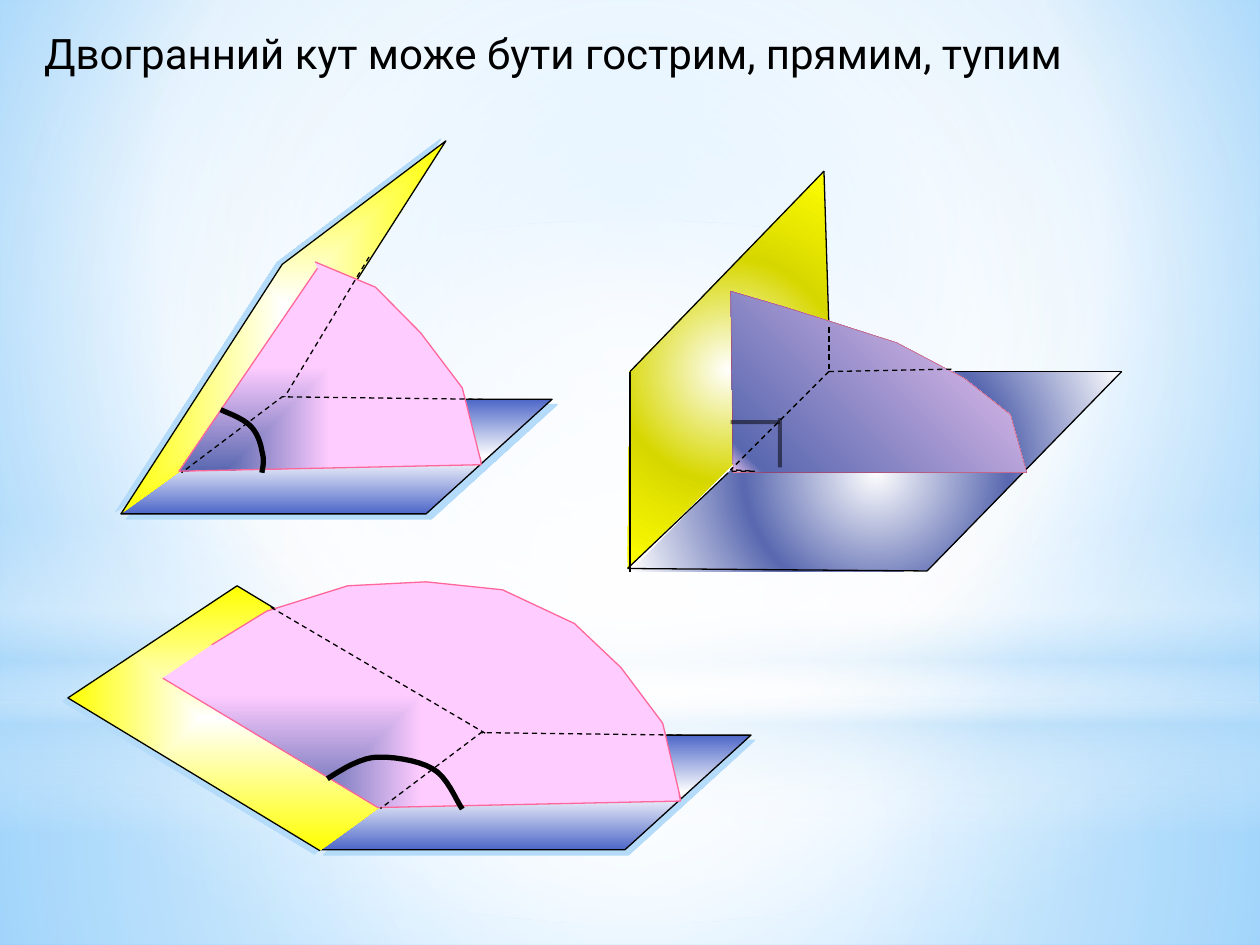
"""Build a slide showing acute, right and obtuse dihedral angles."""
import pptx
import pptx.dml.color
import pptx.enum.dml
import pptx.enum.shapes
import pptx.oxml
import pptx.oxml.ns
import pptx.util
from lxml import etree

Cm = pptx.util.Cm
Pt = pptx.util.Pt
RGBColor = pptx.dml.color.RGBColor
qn = pptx.oxml.ns.qn
SHAPE = pptx.enum.shapes.MSO_SHAPE

BLACK = RGBColor(0x00, 0x00, 0x00)
WHITE = RGBColor(0xFF, 0xFF, 0xFF)
SKY = RGBColor(0x9E, 0xD5, 0xFF)
DEEP_SKY = RGBColor(0x5B, 0xB9, 0xFF)
PALE_SKY = RGBColor(0xB4, 0xDC, 0xFA)
BLUE = RGBColor(0x4E, 0x67, 0xC8)
YELLOW = RGBColor(0xFF, 0xFF, 0x00)
OLIVE = RGBColor(0xD7, 0xD7, 0x00)
INDIGO = RGBColor(0x59, 0x68, 0xB0)
PINK = RGBColor(0xFF, 0xCC, 0xFF)
MAUVE = RGBColor(0xF6, 0xCA, 0xF4)
ROSE = RGBColor(0xFF, 0x66, 0x99)
RED = RGBColor(0xFF, 0x00, 0x00)

CENTRE = (50, 50, 50, 50)
BOTTOM_LEFT = (0, 100, 100, 0)


def apply_gradient(fill, owner, stops, path="rect", focus=CENTRE):
    fill.gradient()
    gradient = next(owner.iter(qn("a:gradFill")))
    for child in list(gradient):
        gradient.remove(child)
    stop_list = etree.SubElement(gradient, qn("a:gsLst"))
    for position, colour, *opacity in stops:
        stop = etree.SubElement(stop_list, qn("a:gs"), pos=str(position * 1000))
        rgb = etree.SubElement(stop, qn("a:srgbClr"), val=str(colour))
        for percent in opacity:
            etree.SubElement(rgb, qn("a:alpha"), val=str(percent * 1000))
    if path == "linear":
        etree.SubElement(gradient, qn("a:lin"), ang="5400000", scaled="0")
    else:
        route = etree.SubElement(gradient, qn("a:path"), path=path)
        sides = {side: str(value * 1000) for side, value in zip("ltrb", focus)}
        etree.SubElement(route, qn("a:fillToRect"), **sides)


def draw(points, colour=BLACK, width=0.75, dashed=False, opacity=100, closed=False,
         stops=None, path="rect", focus=CENTRE, shadow=None):
    corners = [(Cm(x), Cm(y)) for x, y in points]
    if len(corners) == 2:
        figure = shapes.add_connector(
            pptx.enum.shapes.MSO_CONNECTOR.STRAIGHT, *corners[0], *corners[1])
        effects = etree.SubElement(figure.element.spPr, qn("a:effectLst"))
    else:
        builder = shapes.build_freeform(*corners[0])
        builder.add_line_segments(corners[1:], close=closed)
        figure = builder.convert_to_shape()
        figure.shadow.inherit = False
        effects = figure.element.spPr.find(qn("a:effectLst"))
        if stops:
            apply_gradient(figure.fill, figure.element, stops, path, focus)
        else:
            figure.fill.background()
    if shadow:
        distance, angle = shadow
        cast = etree.SubElement(effects, qn("a:outerShdw"), dist=str(Pt(distance)),
                                dir=str(angle * 60000), algn="ctr", rotWithShape="0")
        etree.SubElement(cast, qn("a:srgbClr"), val=str(PALE_SKY))
    if colour is None:
        figure.line.fill.background()
        return
    figure.line.color.rgb = colour
    figure.line.width = Pt(width)
    if dashed:
        figure.line.dash_style = pptx.enum.dml.MSO_LINE.DASH
    if opacity < 100:
        rgb = next(figure.line._get_or_add_ln().iter(qn("a:srgbClr")))
        etree.SubElement(rgb, qn("a:alpha"), val=str(opacity * 1000))


deck = pptx.Presentation()
deck.slide_width, deck.slide_height = Cm(25.4), Cm(19.05)
slide = deck.slides.add_slide(deck.slide_layouts[6])
shapes = slide.shapes

apply_gradient(slide.background.fill, slide.element,
               [(0, SKY), (60, WHITE), (100, DEEP_SKY)], "circle", (20, 10, 20, 60))
glows = [
    (SHAPE.RECTANGLE, 14.17, 4.88, "circle",
     [(0, WHITE, 91), (37, WHITE, 76), (100, PALE_SKY, 79)]),
    (SHAPE.RECTANGLE, 0, 14.17, "circle",
     [(0, WHITE, 89), (48, WHITE, 62), (100, PALE_SKY, 79)]),
    (SHAPE.RECTANGLE, 10.46, 6.35, "linear",
     [(0, WHITE, 0), (29, WHITE, 30), (45, PALE_SKY, 40), (55, WHITE, 26),
      (65, PALE_SKY, 60), (100, WHITE, 0)]),
    (SHAPE.OVAL, 4.45, 14.17, "circle", [(0, WHITE), (56, WHITE, 0)]),
]
for outline, top, height, path, stops in glows:
    glow = shapes.add_shape(outline, 0, Cm(top), deck.slide_width, Cm(height))
    glow.shadow.inherit = False
    glow.line.fill.background()
    apply_gradient(glow.fill, glow.element, stops, path)

title = shapes.add_textbox(Cm(0.64), Cm(0.43), Cm(23.29), Cm(1.27))
title.text_frame.word_wrap = True
heading = title.text_frame.paragraphs[0].add_run()
heading.text = "Двогранний кут може бути гострим, прямим, тупим"
heading.font.name = "Roboto"
heading.font.size = Pt(24)
heading.font.color.rgb = BLACK

floor = [(2.44, 10.36), (4.98, 8.05), (11.13, 8.05), (8.59, 10.36)]
hidden_hinge = [(9.73, 8.05), (5.69, 8), (3.66, 9.53)]
acute = {
    "shift": (0, 0), "floor_shadow": (4.2, 45), "wall_shadow": (3.2, 198),
    "wall": [(5.69, 8), (8.99, 2.84), (5.69, 5.33), (2.44, 10.36)],
    "sector": [(6.4, 5.41), (3.61, 9.5), (9.7, 9.37), (9.68, 9.22), (9.7, 9.32),
               (9.32, 7.82), (8.48, 6.71), (7.57, 5.79), (6.35, 5.28)],
    "arc": [(4.45, 8.26), (4.55, 8.31), (4.9, 8.43), (5.05, 8.59), (5.18, 8.71),
            (5.26, 8.94), (5.28, 9.09), (5.33, 9.27), (5.31, 9.37), (5.28, 9.53)],
    "hidden_edge": [(7.44, 5.18), (5.74, 8)],
}
obtuse = {
    "shift": (4.01, 6.77), "floor_shadow": (3.6, 56), "wall_shadow": (3.6, 146),
    "wall": [(9.7, 14.78), (4.78, 11.81), (1.37, 14.07), (6.45, 17.15)],
    "sector": [(3.28, 13.67), (7.62, 16.28), (13.72, 16.15), (13.69, 16), (13.72, 16.1),
               (13.36, 14.58), (12.52, 13.46), (11.58, 12.57), (10.13, 11.89),
               (8.59, 11.73), (7.01, 11.81), (5.38, 12.32), (4.27, 13)],
    "arc": [(6.6, 15.7), (6.73, 15.62), (7.16, 15.32), (7.52, 15.27), (7.87, 15.24),
            (8.41, 15.32), (8.71, 15.49), (9.02, 15.65), (9.19, 16.13), (9.32, 16.31)],
    "hidden_edge": [(5.46, 12.24), (9.78, 14.78)],
}
for angle in (acute, obtuse):
    right, down = angle["shift"]
    draw([(x + right, y + down) for x, y in floor], closed=True,
         stops=[(0, WHITE), (100, BLUE)], shadow=angle["floor_shadow"])
    draw(angle["wall"], stops=[(0, WHITE), (100, YELLOW)], shadow=angle["wall_shadow"])
    draw(angle["sector"], ROSE, stops=[(0, INDIGO), (100, PINK)], focus=BOTTOM_LEFT)
    arc = angle["arc"]
    curve = [arc[0]]
    for first in range(0, len(arc) - 1, 3):
        for step in range(1, 9):
            t = step / 8
            weights = ((1 - t) ** 3, 3 * t * (1 - t) ** 2, 3 * t * t * (1 - t), t ** 3)
            curve.append([sum(w * point[axis] for w, point in zip(weights, arc[first:first + 4]))
                          for axis in (0, 1)])
    draw(curve, width=3)
    draw([(x + right, y + down) for x, y in hidden_hinge], dashed=True)
    draw(angle["hidden_edge"], dashed=True)

wall_top, wall_cut, wall_left = (16.61, 3.45), (16.71, 6.6), (12.7, 7.49)
hinge_back, hinge_front = (16.71, 7.49), (12.65, 11.46)
floor_back, floor_right, floor_left = (22.61, 7.49), (18.69, 11.51), (12.7, 11.53)
draw([wall_top, (16.71, 7.44), hinge_front, wall_left], None, closed=True,
     stops=[(0, WHITE), (50, OLIVE), (100, YELLOW)], path="circle")
draw([hinge_back, floor_back, floor_right, floor_left], None, closed=True,
     stops=[(0, WHITE), (50, INDIGO), (100, WHITE)], path="circle")
for edge in [(wall_cut, wall_top), (wall_top, wall_left), (wall_left, floor_left),
             (hinge_front, (14.68, 9.53)), (hinge_front, floor_right),
             (floor_right, floor_back), (floor_back, (19.25, 7.49))]:
    draw(edge)

draw([(14.73, 5.87), (14.78, 9.53), (20.7, 9.53), (20.37, 8.36), (19.43, 7.62),
      (18.08, 6.91), (16.74, 6.48), (15.85, 6.2)], RED, 0.25, opacity=51, closed=True,
     stops=[(0, MAUVE), (7, INDIGO), (100, MAUVE)], path="circle", focus=BOTTOM_LEFT)
for square_side in [((14.73, 8.51), (15.72, 8.51)), ((15.72, 8.43), (15.72, 9.42))]:
    draw(square_side, width=2.25, opacity=51)
for hidden in [(hinge_back, (19.25, 7.44)),
               (hinge_back, (14.73, 9.47), (15.21, 9.5), (14.73, 9.5)),
               (wall_cut, hinge_back)]:
    draw(hidden, dashed=True)

deck.save("out.pptx")
